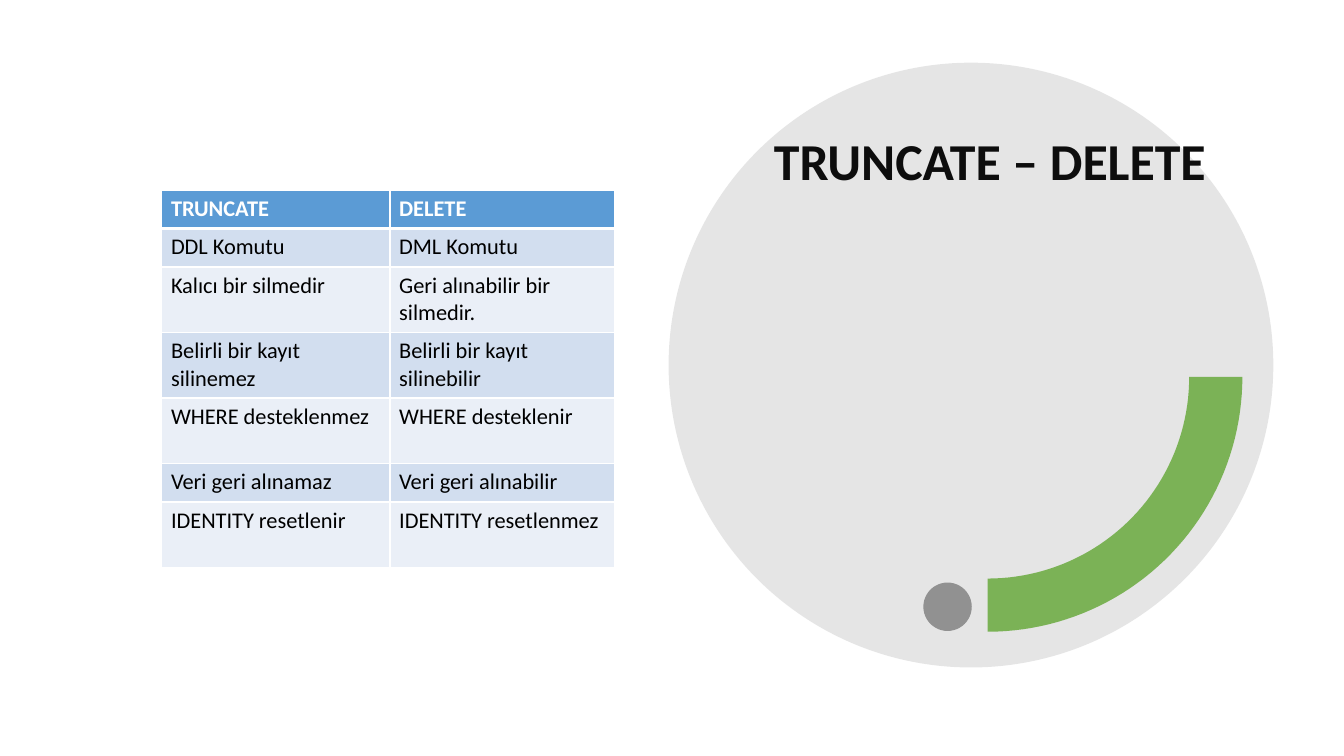
"""Builds a slide comparing the TRUNCATE and DELETE commands."""
from math import cos, radians, sin

from lxml.etree import SubElement
from pptx import Presentation
from pptx.dml.color import RGBColor
from pptx.enum.shapes import MSO_SHAPE
from pptx.enum.text import MSO_ANCHOR, MSO_AUTO_SIZE, PP_ALIGN
from pptx.oxml.ns import qn
from pptx.util import Cm, Pt


def paint(sp, color, alpha=None):
    sp.fill.solid()
    sp.fill.fore_color.rgb = RGBColor.from_string(color)
    if alpha:
        sp.line.fill.background()
        sp.shadow.inherit = False
        clr = sp.element.spPr.find(qn("a:solidFill"))[0]
        SubElement(clr, qn("a:alpha"), val=str(alpha * 1000))


def write(tf, text, size, color, bold=False, spacing=1.0):
    p = tf.paragraphs[0]
    p.alignment = PP_ALIGN.LEFT
    p.line_spacing = spacing
    r = p.add_run()
    r.text = text
    r.font.name = "Calibri"
    r.font.size = Pt(size)
    r.font.bold = bold
    r.font.color.rgb = RGBColor.from_string(color)


prs = Presentation()
prs.slide_width, prs.slide_height = Cm(33.87), Cm(19.05)
s = prs.slides.add_slide(prs.slide_layouts[5])

disc = s.shapes.add_shape(MSO_SHAPE.OVAL, Cm(16.85), Cm(1.58), Cm(15.24), Cm(15.24))
paint(disc, "808080", alpha=20)

title = s.shapes.title
title.left, title.top, title.width, title.height = Cm(19.25), Cm(3.3), Cm(11.58), Cm(4.5)
tf = title.text_frame
tf.word_wrap = True
tf.auto_size = MSO_AUTO_SIZE.NONE
tf.vertical_anchor = MSO_ANCHOR.TOP
write(tf, "TRUNCATE – DELETE", 37, "0D0D0D", bold=True, spacing=0.9)
title.element.addprevious(disc.element)

dot = s.shapes.add_shape(MSO_SHAPE.OVAL, Cm(23.27), Cm(14.68), Cm(1.22), Cm(1.22))
paint(dot, "595959", alpha=60)

cx, cy, outer, inner = 24.89, 9.5, 6.42, 5.08
sweep = [(outer, a) for a in range(0, 91, 2)] + [(inner, a) for a in range(90, -1, -2)]
pts = [(Cm(cx + rad * cos(radians(a))), Cm(cy + rad * sin(radians(a)))) for rad, a in sweep]
fb = s.shapes.build_freeform(*pts[0])
fb.add_line_segments(pts[1:], close=True)
paint(fb.convert_to_shape(), "70AD47", alpha=90)

rows = [
    ("TRUNCATE", "DELETE", 0.97),
    ("DDL Komutu", "DML Komutu", 0.97),
    ("Kalıcı bir silmedir", "Geri alınabilir bir silmedir.", 1.65),
    ("Belirli bir kayıt silinemez", "Belirli bir kayıt silinebilir", 1.65),
    ("WHERE desteklenmez", "WHERE desteklenir", 1.65),
    ("Veri geri alınamaz", "Veri geri alınabilir", 0.97),
    ("IDENTITY resetlenir", "IDENTITY resetlenmez", 1.65),
]
tbl = s.shapes.add_table(len(rows), 2, Cm(4.08), Cm(4.79), Cm(11.41), Cm(9.51)).table
tbl.columns[0].width, tbl.columns[1].width = Cm(5.75), Cm(5.66)
for i, (*texts, height) in enumerate(rows):
    tbl.rows[i].height = Cm(height)
    head = i == 0
    fill = "5B9BD5" if head else ("EAEFF7", "D2DEEF")[i % 2]
    for j, text in enumerate(texts):
        cell = tbl.cell(i, j)
        cell.margin_left = cell.margin_right = Cm(0.23)
        cell.margin_top = cell.margin_bottom = Cm(0.12)
        write(cell.text_frame, text, 16, "FFFFFF" if head else "000000", bold=head)
        tcPr = cell._tc.get_or_add_tcPr()
        for side in "LRTB":
            thick = (i, side) in ((0, "B"), (1, "T"))
            ln = SubElement(tcPr, qn(f"a:ln{side}"), w=str(Pt(3 if thick else 1)))
            SubElement(SubElement(ln, qn("a:solidFill")), qn("a:srgbClr"), val="FFFFFF")
        paint(cell, fill)

prs.save("out.pptx")
